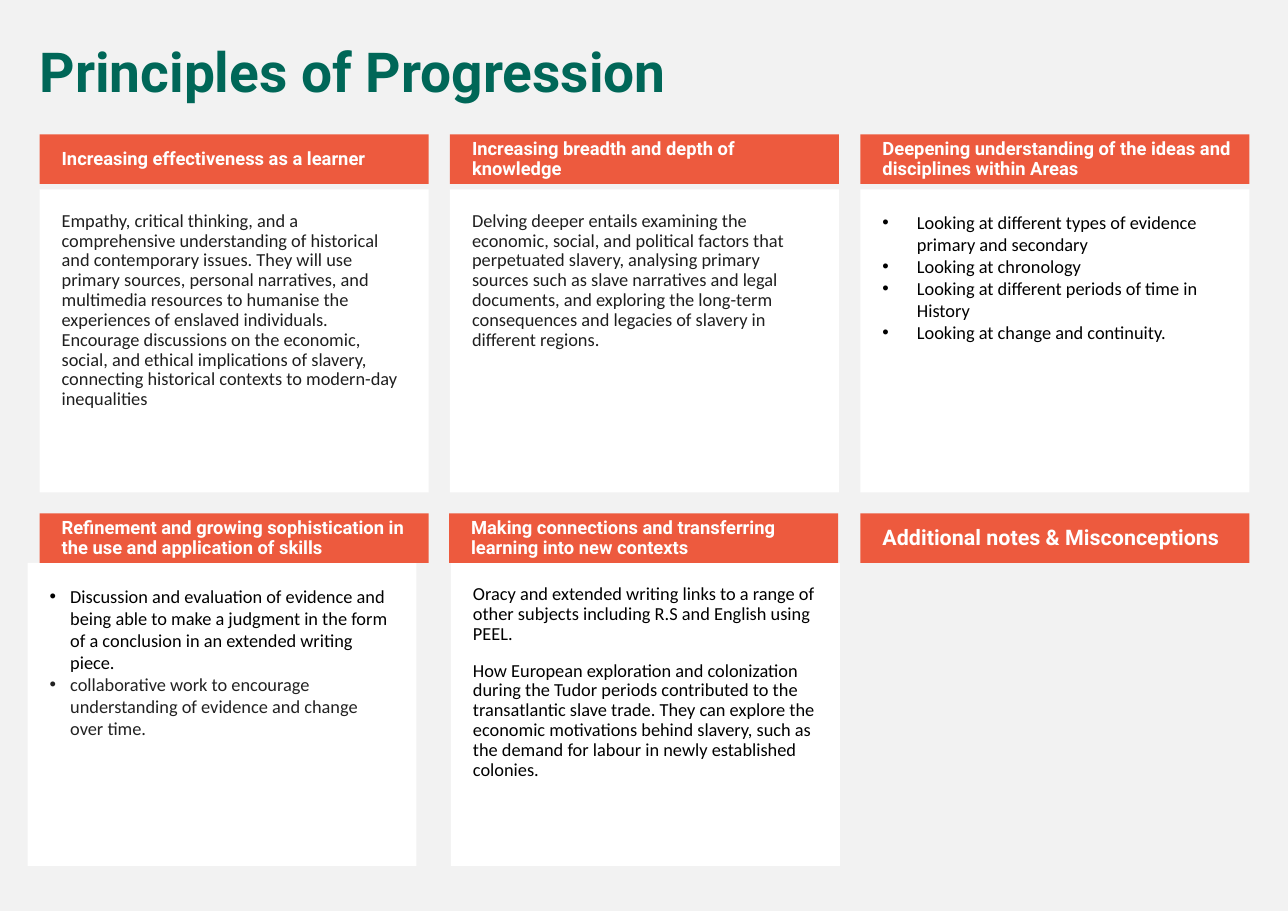
from lxml import etree
from pptx import Presentation
from pptx.dml.color import RGBColor
from pptx.enum import shapes, text
from pptx.oxml import ns
from pptx.util import Pt

LEFT, COLUMN_STEP, CARD_WIDTH = 25.9, 268.2, 254.2
HEADER_HEIGHT, BODY_HEIGHT = 32.4, 198
TOP_ROW, BOTTOM_ROW = 87.8, 335.5
ORANGE, GREEN, WHITE, BLACK = "ED5A3E", "006758", "FFFFFF", "000000"
CHARCOAL, DARK_GREY, PALE_GREY = "1F1F1F", "222222", "F2F2F2"


def paint(color_format, hex_color):
    color_format.rgb = RGBColor.from_string(hex_color)


def fill_with(fill, hex_color):
    fill.solid()
    paint(fill.fore_color, hex_color)


def place(shape, left, top, width, height):
    shape.left, shape.top = Pt(left), Pt(top)
    shape.width, shape.height = Pt(width), Pt(height)


def set_frame(frame, insets, anchor):
    frame.word_wrap = True
    frame.auto_size = text.MSO_AUTO_SIZE.NONE
    frame.vertical_anchor = anchor
    (frame.margin_left, frame.margin_top,
     frame.margin_right, frame.margin_bottom) = map(Pt, insets)


def add_bullet(paragraph, indent):
    properties = paragraph._p.get_or_add_pPr()
    properties.set("marL", str(Pt(indent)))
    properties.set("indent", str(-Pt(indent)))
    etree.SubElement(properties, ns.qn("a:buFont")).set("typeface", "Arial")
    etree.SubElement(properties, ns.qn("a:buChar")).set("char", "•")


def write(frame, lines, font_name, size, bold=False, indent=0):
    """Write (wording, colour) pairs, one paragraph each."""
    for index, (wording, color) in enumerate(lines):
        paragraph = frame.paragraphs[0] if index == 0 else frame.add_paragraph()
        paragraph.alignment = text.PP_ALIGN.LEFT
        if indent:
            add_bullet(paragraph, indent)
        else:
            paragraph.line_spacing = 0.9
            paragraph.space_before = Pt(11)
        run = paragraph.add_run()
        run.text = wording
        run.font.name, run.font.size, run.font.bold = font_name, Pt(size), bold
        paint(run.font.color, color)


def add_panel(slide, box, hex_color, insets, anchor):
    shape = slide.shapes.add_shape(shapes.MSO_SHAPE.RECTANGLE, *map(Pt, box))
    shape.shadow.inherit = False
    fill_with(shape.fill, hex_color)
    shape.line.fill.background()
    set_frame(shape.text_frame, insets, anchor)
    return shape.text_frame


def add_title(slide, left, top, width, height):
    title = slide.shapes.title
    place(title, left, top, width, height)
    set_frame(title.text_frame, (7.2, 3.6, 7.2, 3.6), text.MSO_ANCHOR.TOP)
    write(title.text_frame, [("Principles of Progression", GREEN)], "Roboto", 36, True)


def add_card(slide, left, top, heading, lines=(), heading_size=12,
             indent=0, gap=0, header_shift=0, body_shift=0):
    """Orange heading bar, with a white body under it when there are lines."""
    if lines:
        body_box = (left + body_shift, top + HEADER_HEIGHT + gap, CARD_WIDTH, BODY_HEIGHT)
        body = add_panel(slide, body_box, WHITE, (14.4,) * 4, text.MSO_ANCHOR.TOP)
        write(body, lines, "Calibri", 12, indent=indent)
    header_box = (left + header_shift, top, CARD_WIDTH, HEADER_HEIGHT)
    header = add_panel(slide, header_box, ORANGE, (14.4, 3.6, 7.2, 3.6),
                       text.MSO_ANCHOR.MIDDLE)
    write(header, [(heading, WHITE)], "Roboto", heading_size, True)


TOP_CARDS = [
    dict(heading="Increasing effectiveness as a learner", lines=[(
        "Empathy, critical thinking, and a comprehensive understanding of historical and "
        "contemporary issues. They will use primary sources, personal narratives, and "
        "multimedia resources to humanise the experiences of enslaved individuals. "
        "Encourage discussions on the economic, social, and ethical implications of "
        "slavery, connecting historical contexts to modern-day inequalities", CHARCOAL)]),
    dict(heading="Increasing breadth and depth of knowledge", lines=[(
        "Delving deeper entails examining the economic, social, and political factors that "
        "perpetuated slavery, analysing primary sources such as slave narratives and legal "
        "documents, and exploring the long-term consequences and legacies of slavery in "
        "different regions.", CHARCOAL)]),
    dict(heading="Deepening understanding of the ideas and disciplines within Areas",
         indent=22.5, lines=[
             ("Looking at different types of evidence primary and secondary", BLACK),
             ("Looking at chronology", BLACK),
             ("Looking at different periods of time in History", BLACK),
             ("Looking at change and continuity.", BLACK)]),
]

BOTTOM_CARDS = [
    dict(heading="Refinement and growing sophistication in the use and application of skills",
         indent=13.5, body_shift=-7.9, lines=[
             ("Discussion and evaluation of evidence and being able to make a judgment in "
              "the form of a conclusion in an extended writing piece.", BLACK),
             ("collaborative work to encourage understanding of evidence and change "
              "over time.", DARK_GREY)]),
    dict(heading="Making connections and transferring learning into new contexts",
         header_shift=-0.6, body_shift=0.6, lines=[
             ("Oracy and extended writing links to a range of other subjects including "
              "R.S and English using PEEL.", BLACK),
             ("How European exploration and colonization during the Tudor periods "
              "contributed to the transatlantic slave trade. They can explore the economic "
              "motivations behind slavery, such as the demand for labour in newly "
              "established colonies.", BLACK)]),
    dict(heading="Additional notes & Misconceptions", heading_size=14),
]


def add_card_row(slide, top, cards, gap):
    for column, card in enumerate(cards):
        add_card(slide, LEFT + column * COLUMN_STEP, top, gap=gap, **card)


def main():
    presentation = Presentation()
    presentation.slide_width, presentation.slide_height = Pt(841.7), Pt(595.4)
    slide = presentation.slides.add_slide(presentation.slide_layouts[5])
    fill_with(slide.background.fill, PALE_GREY)

    # Title
    add_title(slide, 18.7, 25.9, 797.8, 46.8)
    # Upper and lower rows of cards
    add_card_row(slide, TOP_ROW, TOP_CARDS, gap=3.6)
    add_card_row(slide, BOTTOM_ROW, BOTTOM_CARDS, gap=0)

    presentation.save("out.pptx")


if __name__ == "__main__":
    main()
